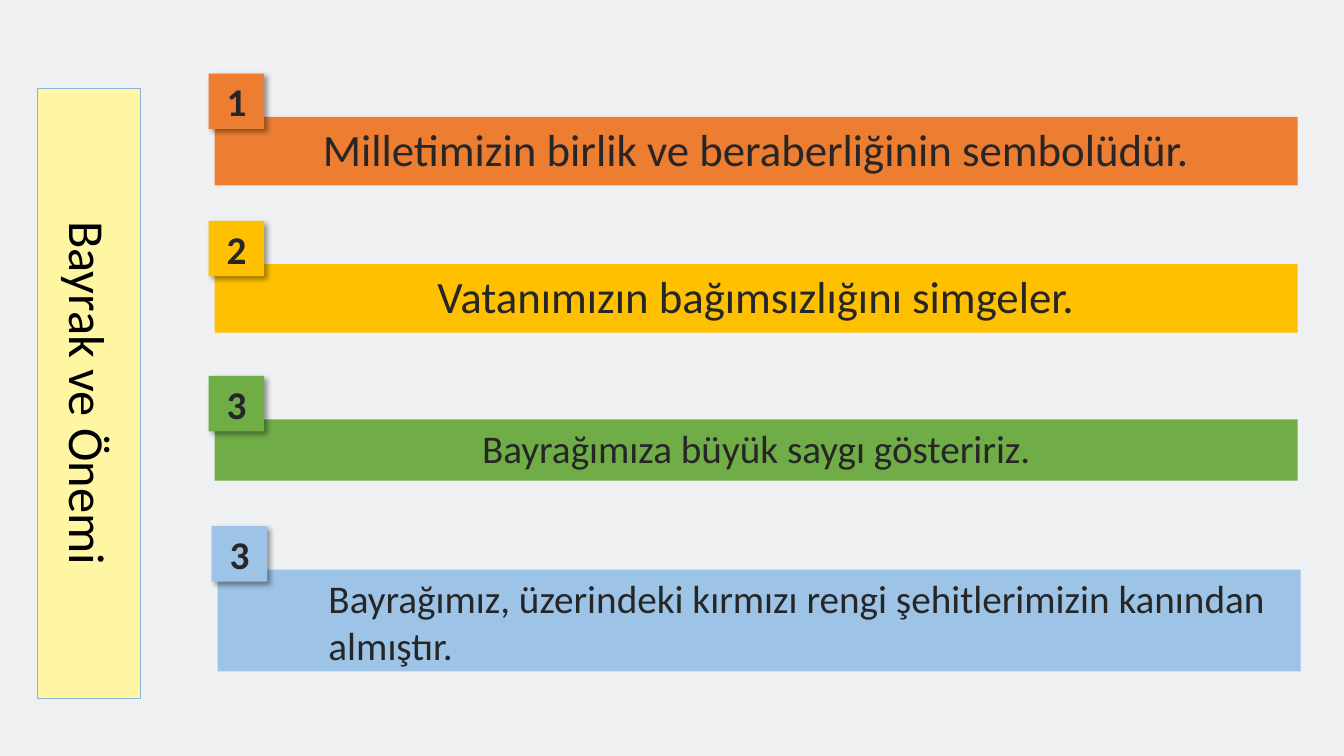
from lxml import etree
from pptx import Presentation
from pptx.dml.color import RGBColor
from pptx.enum.shapes import MSO_SHAPE
from pptx.enum.text import MSO_ANCHOR, PP_ALIGN
from pptx.oxml.ns import qn
from pptx.util import Inches, Pt

RECT = MSO_SHAPE.RECTANGLE
TOP, MIDDLE = MSO_ANCHOR.TOP, MSO_ANCHOR.MIDDLE
LEFT, CENTER = PP_ALIGN.LEFT, PP_ALIGN.CENTER

TITLE = "Bayrak ve Önemi"
FONT, BACK, DARK = "Calibri", "EEF0F2", "262626"

# number, text, colour, left, top, height, size, alignment
BARS = [
    ("1", "Milletimizin birlik ve beraberliğinin sembolüdür.",
     "ED7D31", 2.13, 1.16, 0.68, 32, CENTER),
    ("2", "Vatanımızın bağımsızlığını simgeler.",
     "FFC000", 2.13, 2.62, 0.68, 32, CENTER),
    ("3", "Bayrağımıza büyük saygı gösteririz.",
     "70AD47", 2.13, 4.16, 0.61, 28, CENTER),
    ("3", "Bayrağımız, üzerindeki kırmızı rengi şehitlerimizin kanından almıştır.",
     "9DC3E6", 2.16, 5.65, 1.01, 28, LEFT),
]
BAR_W, TAG = 10.74, 0.55
TAG_DX, TAG_DY = 0.06, 0.43
INDENT = 1


def paint(fmt, color):
    fmt.solid()
    fmt.fore_color.rgb = RGBColor.from_string(color)


def box(slide, at, fill, text, size, color=DARK, bold=False,
        anchor=MIDDLE, align=CENTER):
    """Add a borderless filled rectangle with one line of text."""
    shape = slide.shapes.add_shape(RECT, *(Inches(v) for v in at))
    shape.shadow.inherit = False
    paint(shape.fill, fill)
    shape.line.fill.background()
    frame = shape.text_frame
    frame.text = text
    frame.word_wrap = True
    frame.vertical_anchor = anchor
    para = frame.paragraphs[0]
    para.alignment = align
    font = para.runs[0].font
    font.name, font.size, font.bold = FONT, Pt(size), bold
    paint(font.fill, color)
    return shape


def shade(shape):
    """Give the shape a soft shadow to the lower right."""
    effects = shape._element.spPr.find(qn("a:effectLst"))
    outer = etree.SubElement(effects, qn("a:outerShdw"), blurRad=str(Pt(4)),
                             dist=str(Pt(3)), dir=str(45 * 60000),
                             algn="tl", rotWithShape="0")
    black = etree.SubElement(outer, qn("a:srgbClr"), val="000000")
    etree.SubElement(black, qn("a:alpha"), val="40000")


def main():
    prs = Presentation()
    prs.slide_width, prs.slide_height = Inches(13.33), Inches(7.5)
    slide = prs.slides.add_slide(prs.slide_layouts[6])
    paint(slide.background.fill, BACK)

    title = box(slide, (-2.14, 3.39, 6.05, 1.02), "FEF6A3", TITLE, 36, "000000")
    title.rotation = 90
    paint(title.line.fill, "8BB2DD")
    title.line.width = Pt(0.5)

    for num, text, color, x, y, height, size, align in BARS:
        bar = box(slide, (x, y, BAR_W, height), color, text, size,
                  anchor=TOP, align=align)
        if align == LEFT:
            props = bar.text_frame.paragraphs[0]._p.get_or_add_pPr()
            props.set("marL", str(Inches(INDENT)))
            props.set("indent", "0")
        tag = box(slide, (x - TAG_DX, y - TAG_DY, TAG, TAG), color, num, 28,
                  bold=True)
        shade(tag)

    prs.save("out.pptx")


if __name__ == "__main__":
    main()
